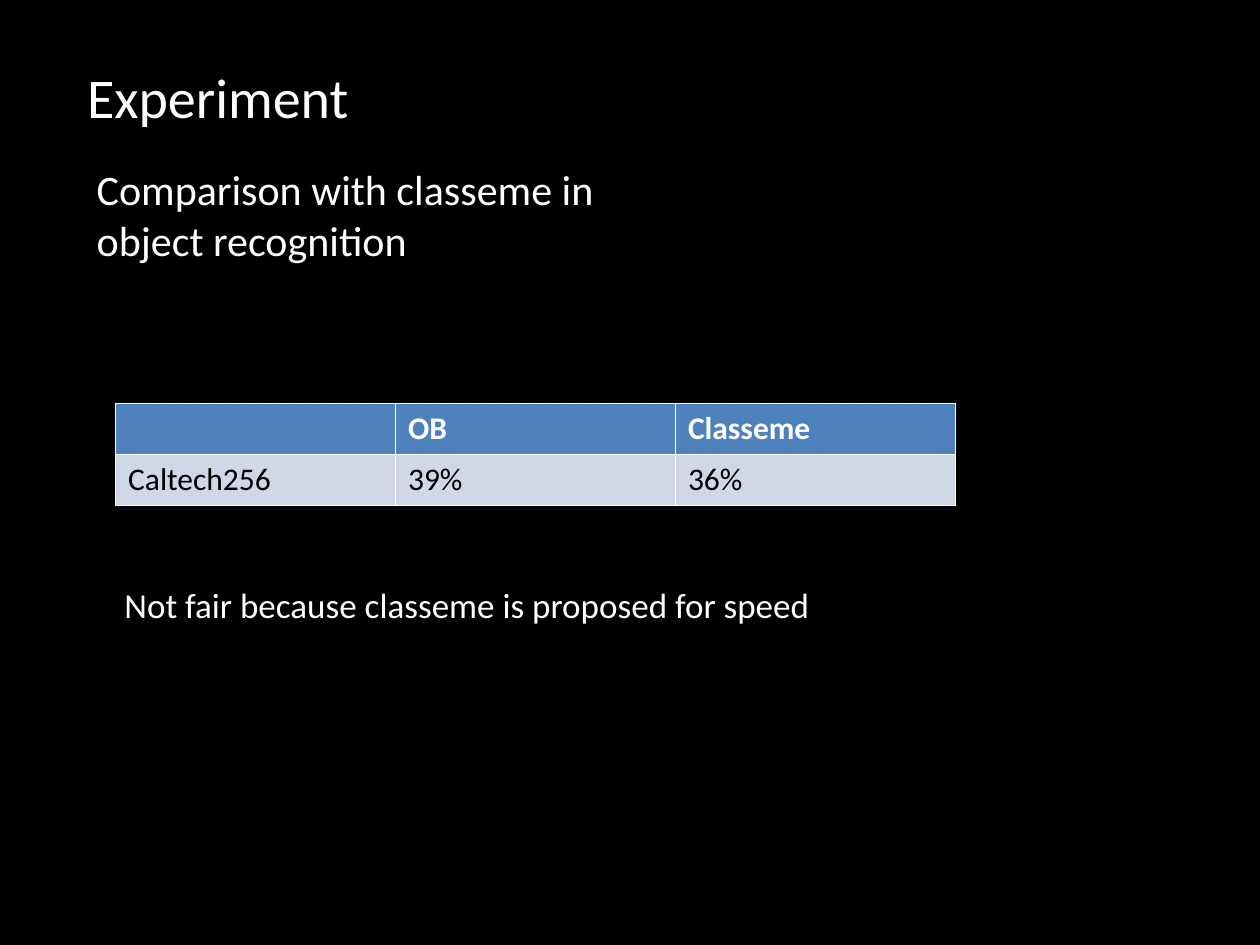
from pptx import Presentation
from pptx.dml.color import RGBColor
from pptx.enum.text import MSO_ANCHOR as Anchor, MSO_AUTO_SIZE as AutoSize, PP_ALIGN as Align
from pptx.util import Cm, Pt

BLACK = RGBColor(0x00, 0x00, 0x00)
WHITE = RGBColor(0xFF, 0xFF, 0xFF)
HEADER_BLUE = RGBColor(0x4F, 0x81, 0xBD)
BODY_BLUE = RGBColor(0xD0, 0xD8, 0xE8)


def write(frame, text, size, color, bold=False):
    frame.text = text
    paragraph = frame.paragraphs[0]
    paragraph.alignment = Align.LEFT
    font = paragraph.font
    font.name, font.size, font.bold = "Calibri", Pt(size), bold
    font.color.rgb = color


prs = Presentation()
prs.slide_width, prs.slide_height = Cm(25.4), Cm(19.05)
slide = prs.slides.add_slide(prs.slide_layouts[5])
slide.background.fill.solid()
slide.background.fill.fore_color.rgb = BLACK

title = slide.shapes.title
title.left, title.top, title.width, title.height = Cm(1.5), Cm(0.74), Cm(12.57), Cm(2.39)
title.text_frame.auto_size = AutoSize.NONE
title.text_frame.vertical_anchor = Anchor.MIDDLE
write(title.text_frame, "Experiment", 32, WHITE)

subtitle = slide.shapes.add_textbox(Cm(1.7), Cm(2.72), Cm(12.57), Cm(3.2)).text_frame
subtitle.word_wrap = True
subtitle.vertical_anchor = Anchor.MIDDLE
write(subtitle, "Comparison with classeme in object recognition", 24, WHITE)

remark = slide.shapes.add_textbox(Cm(2.26), Cm(11.63), Cm(18.6), Cm(1.12)).text_frame
remark.word_wrap = True
remark.auto_size = AutoSize.SHAPE_TO_FIT_TEXT
write(remark, "Not fair because classeme is proposed for speed", 20, WHITE)

results = [["", "OB", "Classeme"], ["Caltech256", "39%", "36%"]]
accuracy = slide.shapes.add_table(2, 3, Cm(2.33), Cm(8.13), Cm(16.93), Cm(2.06)).table
for r, values in enumerate(results):
    is_header = r == 0
    for c, value in enumerate(values):
        cell = accuracy.cell(r, c)
        cell.fill.solid()
        cell.fill.fore_color.rgb = HEADER_BLUE if is_header else BODY_BLUE
        write(cell.text_frame, value, 18, WHITE if is_header else BLACK, is_header)

prs.save("out.pptx")
